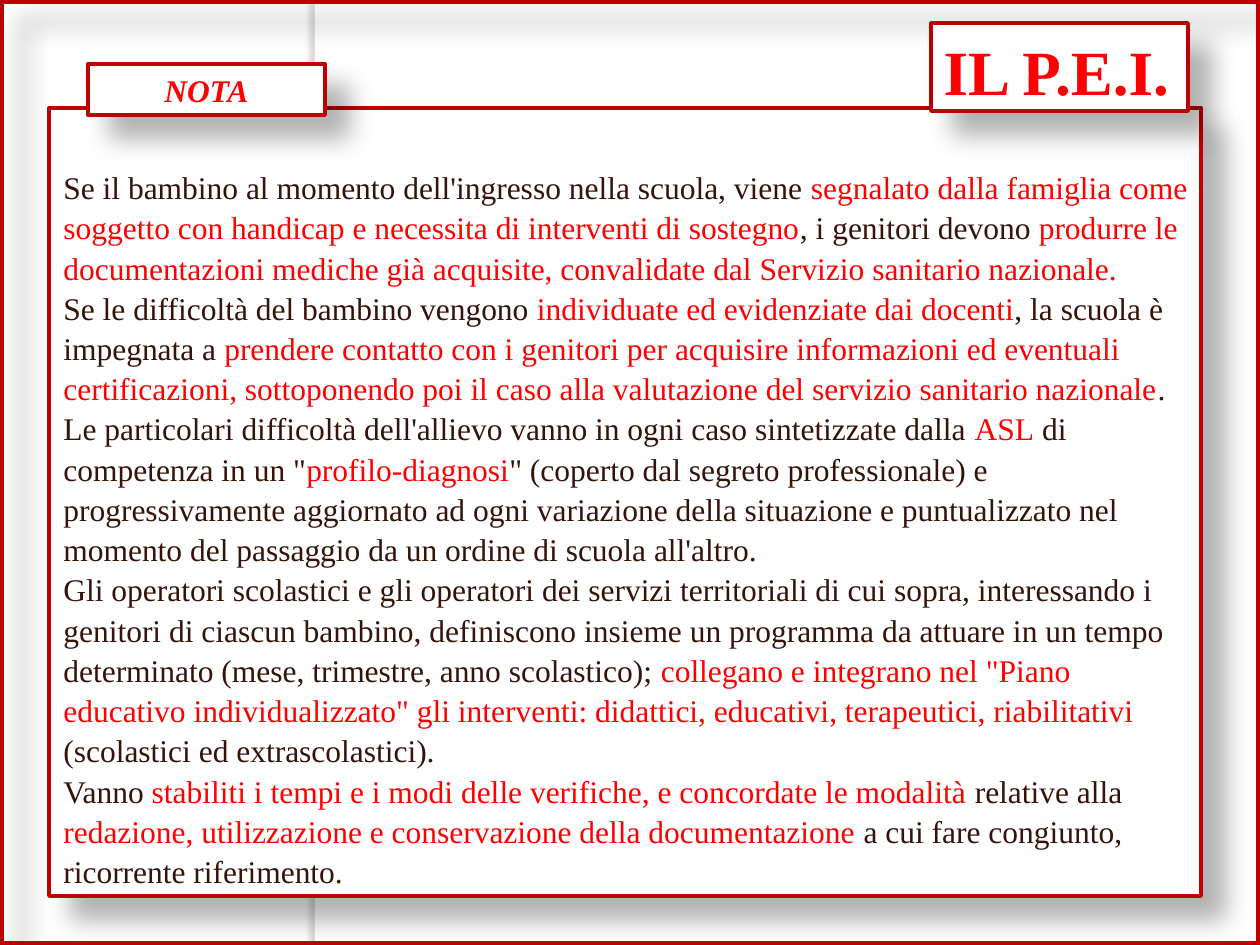
import lxml.etree
import pptx
import pptx.dml.color
import pptx.enum.shapes
import pptx.enum.text
import pptx.oxml.ns
import pptx.util

EMU_PER_PX = 914400 / 126
FONT = "Times New Roman"
WHITE, BORDER, RED, BROWN = "FFFFFF", "C00000", "FF0000", "361309"
SOFT_SHADOW = ("000000", 30, 15, 18, 45)
EDGE_SHADOW = ("736F63", 25, 3, 3, 180)

# Bars mark the switch between brown text and red text.
NOTES = [
    "Se il bambino al momento dell'ingresso nella scuola, viene |segnalato dalla famiglia "
    "come soggetto con handicap e necessita di interventi di sostegno|, i genitori devono "
    "|produrre le documentazioni mediche già acquisite, convalidate dal Servizio sanitario "
    "nazionale.",
    "Se le difficoltà del bambino vengono |individuate ed evidenziate dai docenti|, la scuola è "
    "impegnata a |prendere contatto con i genitori per acquisire informazioni ed eventuali "
    "certificazioni, sottoponendo poi il caso alla valutazione del servizio sanitario "
    "nazionale|.",
    "Le particolari difficoltà dell'allievo vanno in ogni caso sintetizzate dalla |ASL| di "
    "competenza in un \"|profilo-diagnosi|\" (coperto dal segreto professionale) e "
    "progressivamente aggiornato ad ogni variazione della situazione e puntualizzato nel "
    "momento del passaggio da un ordine di scuola all'altro.",
    "Gli operatori scolastici e gli operatori dei servizi territoriali di cui sopra, "
    "interessando i genitori di ciascun bambino, definiscono insieme un programma da attuare "
    "in un tempo determinato (mese, trimestre, anno scolastico); |collegano e integrano nel "
    "\"Piano educativo individualizzato\" gli interventi: didattici, educativi, terapeutici, "
    "riabilitativi |(scolastici ed extrascolastici).",
    "Vanno |stabiliti i tempi e i modi delle verifiche, e concordate le modalità |relative alla "
    "|redazione, utilizzazione e conservazione della documentazione |a cui fare congiunto, "
    "ricorrente riferimento.",
]


def px(n):
    return pptx.util.Emu(round(n * EMU_PER_PX))


def rgb(value):
    return pptx.dml.color.RGBColor.from_string(value)


def set_shadow(sp, color, alpha, blur, dist, angle):
    """Give an outer shadow: alpha in percent, blur and dist in points, angle in degrees."""
    sp.shadow.inherit = False
    qn = pptx.oxml.ns.qn
    effects = sp._element.spPr.find(qn("a:effectLst"))
    outer = lxml.etree.SubElement(
        effects, qn("a:outerShdw"), blurRad=str(blur * 12700), dist=str(dist * 12700),
        dir=str(angle * 60000), algn="tl", rotWithShape="0")
    clr = lxml.etree.SubElement(outer, qn("a:srgbClr"), val=color)
    lxml.etree.SubElement(clr, qn("a:alpha"), val=str(alpha * 1000))


def style_box(sp, fill, line_pt, shadow=SOFT_SHADOW):
    if fill:
        sp.fill.solid()
        sp.fill.fore_color.rgb = rgb(fill)
    else:
        sp.fill.background()
    if line_pt:
        sp.line.color.rgb = rgb(BORDER)
        sp.line.width = pptx.util.Pt(line_pt)
    else:
        sp.line.fill.background()
    set_shadow(sp, *shadow)


def add_box(s, x, y, w, h, fill, line_pt, shadow=SOFT_SHADOW):
    sp = s.shapes.add_shape(pptx.enum.shapes.MSO_SHAPE.RECTANGLE, px(x), px(y), px(w), px(h))
    style_box(sp, fill, line_pt, shadow)
    return sp


def format_run(r, size, color, bold=False, italic=False):
    r.font.name = FONT
    r.font.size = pptx.util.Pt(size)
    r.font.color.rgb = rgb(color)
    r.font.bold = bold
    r.font.italic = italic


def set_heading(sp, text, size, align, anchor, italic=False):
    tf = sp.text_frame
    tf.text = text
    tf.word_wrap = True
    tf.auto_size = pptx.enum.text.MSO_AUTO_SIZE.NONE
    tf.vertical_anchor = anchor
    p = tf.paragraphs[0]
    p.alignment = align
    format_run(p.runs[0], size, RED, True, italic)
    return p


def set_notes(sp):
    tf = sp.text_frame
    tf.word_wrap = True
    tf.vertical_anchor = pptx.enum.text.MSO_ANCHOR.BOTTOM
    for i, note in enumerate(NOTES):
        p = tf.add_paragraph() if i else tf.paragraphs[0]
        p.alignment = pptx.enum.text.PP_ALIGN.LEFT
        p.line_spacing = pptx.util.Pt(23)
        p._p.get_or_add_pPr().set("marL", str(px(2)))
        for j, part in enumerate(note.split("|")):
            r = p.add_run()
            r.text = part
            format_run(r, 18, RED if j % 2 else BROWN)


def place_title(s):
    sp = s.shapes.title
    sp.left, sp.top, sp.width, sp.height = px(931), px(23), px(257), px(88)
    style_box(sp, WHITE, 2.25)
    p = set_heading(sp, "IL P.E.I.", 36, pptx.enum.text.PP_ALIGN.LEFT,
                    pptx.enum.text.MSO_ANCHOR.TOP)
    p.line_spacing = pptx.util.Pt(45)
    s.shapes._spTree.append(sp._element)  # in front of the notes panel


def main():
    prs = pptx.Presentation()
    prs.slide_width, prs.slide_height = px(1260), px(945)
    s = prs.slides.add_slide(prs.slide_layouts[5])
    add_box(s, 315, 0, 10, 945, WHITE, None, EDGE_SHADOW)
    set_notes(add_box(s, 49, 108, 1152, 788, WHITE, 2.25))
    add_box(s, 0, 0, 1260, 945, None, 4.5)
    place_title(s)
    label = add_box(s, 88, 64, 237, 51, WHITE, 2.25)
    set_heading(label, "NOTA", 18, pptx.enum.text.PP_ALIGN.CENTER,
                pptx.enum.text.MSO_ANCHOR.MIDDLE, italic=True)
    prs.save("out.pptx")


if __name__ == "__main__":
    main()
